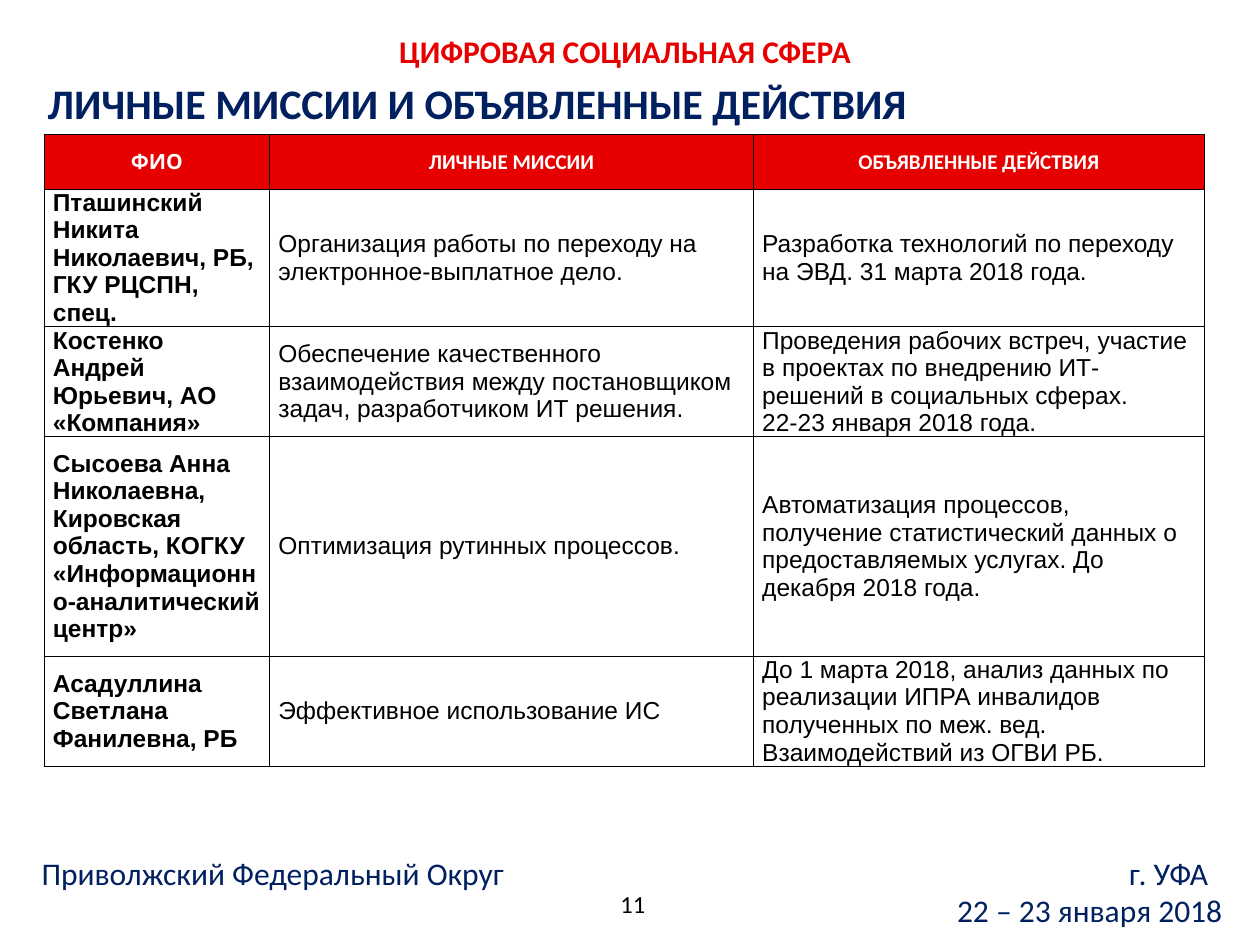
"""Build the slide with the table of personal missions and announced actions."""
from lxml.etree import SubElement
from pptx import Presentation
from pptx.dml.color import RGBColor
from pptx.enum.text import MSO_ANCHOR as Anchor, MSO_AUTO_SIZE as AutoSize, PP_ALIGN as Align
from pptx.oxml import parse_xml
from pptx.oxml.ns import nsdecls, qn
from pptx.util import Inches, Pt

RED = RGBColor(0xE6, 0x00, 0x00)
NAVY = RGBColor(0x00, 0x20, 0x60)
WHITE = RGBColor(0xFF, 0xFF, 0xFF)
BLACK = RGBColor(0x00, 0x00, 0x00)


def write(frame, text, size=18, font="Calibri", color=NAVY, bold=False,
          align=Align.LEFT, anchor=Anchor.MIDDLE):
    frame.word_wrap = True
    frame.vertical_anchor = anchor
    for number, line in enumerate(text.split("\n")):
        para = frame.add_paragraph() if number else frame.paragraphs[0]
        para.alignment = align
        span = para.add_run()
        span.text = line
        span.font.size = Pt(size)
        span.font.name = font
        span.font.bold = bold
        span.font.color.rgb = color


def add_box(left, top, width, height):
    return page.shapes.add_textbox(Inches(left), Inches(top), Inches(width), Inches(height)).text_frame


deck = Presentation()
deck.slide_width, deck.slide_height = Inches(10), Inches(7.5)
page = deck.slides.add_slide(deck.slide_layouts[6])

HEADERS = [("ФИО", "Cabin"), ("ЛИЧНЫЕ МИССИИ", "Calibri"), ("ОБЪЯВЛЕННЫЕ ДЕЙСТВИЯ", "Calibri")]
PEOPLE = [
    ("Пташинский Никита Николаевич, РБ, ГКУ РЦСПН, спец.",
     "Организация работы по переходу на электронное-выплатное дело.",
     "Разработка технологий по переходу на ЭВД. 31 марта 2018 года."),
    ("Костенко Андрей Юрьевич, АО «Компания»",
     "Обеспечение качественного взаимодействия между постановщиком задач, разработчиком ИТ решения.",
     "Проведения рабочих встреч, участие в проектах по внедрению ИТ-решений в социальных сферах.\n"
     "22-23 января 2018 года."),
    ("Сысоева Анна Николаевна, Кировская область, КОГКУ «Информационно-аналитический центр»",
     "Оптимизация рутинных процессов.",
     "Автоматизация процессов, получение статистический данных о предоставляемых услугах. "
     "До декабря 2018 года."),
    ("Асадуллина Светлана Фанилевна, РБ",
     "Эффективное использование ИС",
     "До 1 марта 2018, анализ данных по реализации ИПРА инвалидов полученных по меж. вед. "
     "Взаимодействий из ОГВИ РБ."),
]
COLUMN_WIDTHS = [1.79, 3.84, 3.58]
ROW_HEIGHTS = [0.43, 1.09, 0.87, 1.74, 0.87]

table = page.shapes.add_table(
    len(ROW_HEIGHTS), len(COLUMN_WIDTHS), Inches(0.35), Inches(1.07),
    Inches(sum(COLUMN_WIDTHS)), Inches(sum(ROW_HEIGHTS))).table
for column, width in zip(table.columns, COLUMN_WIDTHS):
    column.width = Inches(width)
for row, height in zip(table.rows, ROW_HEIGHTS):
    row.height = Inches(height)

for index, (header, font) in enumerate(HEADERS):
    write(table.cell(0, index).text_frame, header, size=12, font=font, color=WHITE,
          bold=True, align=Align.CENTER)
for row_index, person in enumerate(PEOPLE, 1):
    for index, text in enumerate(person):
        write(table.cell(row_index, index).text_frame, text, size=14, font="Arial",
              color=BLACK, bold=index == 0)

for row_index, row in enumerate(table.rows):
    for cell in row.cells:
        cell.vertical_anchor = Anchor.MIDDLE
        cell.margin_left = cell.margin_right = Inches(0.07)
        cell.margin_top = cell.margin_bottom = Inches(0 if row_index else 0.04)
        cell.fill.solid()
        cell.fill.fore_color.rgb = WHITE if row_index else RED
        properties = cell._tc.get_or_add_tcPr()
        for position, side in enumerate(("lnL", "lnR", "lnT", "lnB")):
            properties.insert(position, parse_xml(
                f'<a:{side} {nsdecls("a")} w="{Pt(0.5)}"><a:solidFill>'
                f'<a:srgbClr val="{BLACK}"/></a:solidFill></a:{side}>'))

heading = add_box(0.28, 0.57, 7.09, 0.5)
write(heading, "ЛИЧНЫЕ МИССИИ И ОБЪЯВЛЕННЫЕ ДЕЙСТВИЯ", size=24, bold=True, anchor=Anchor.TOP)
heading.word_wrap = False
heading.auto_size = AutoSize.SHAPE_TO_FIT_TEXT

write(add_box(3.07, 0.21, 3.86, 0.39), "ЦИФРОВАЯ СОЦИАЛЬНАЯ СФЕРА", color=RED, bold=True)

footer = add_box(0.13, 6.78, 9.67, 0.59)
footer.margin_left = Inches(0.2)
write(footer, "Приволжский Федеральный Округ\tг. УФА\n22 – 23 января 2018")
place, date = footer.paragraphs
date.alignment = Align.RIGHT
tabs = SubElement(place._p.get_or_add_pPr(), qn("a:tabLst"))
SubElement(tabs, qn("a:tab"), pos=str(Inches(9.26)), algn="r")

write(add_box(4.78, 6.97, 0.44, 0.4), "11", size=14, color=BLACK, align=Align.RIGHT)

deck.save("out.pptx")
